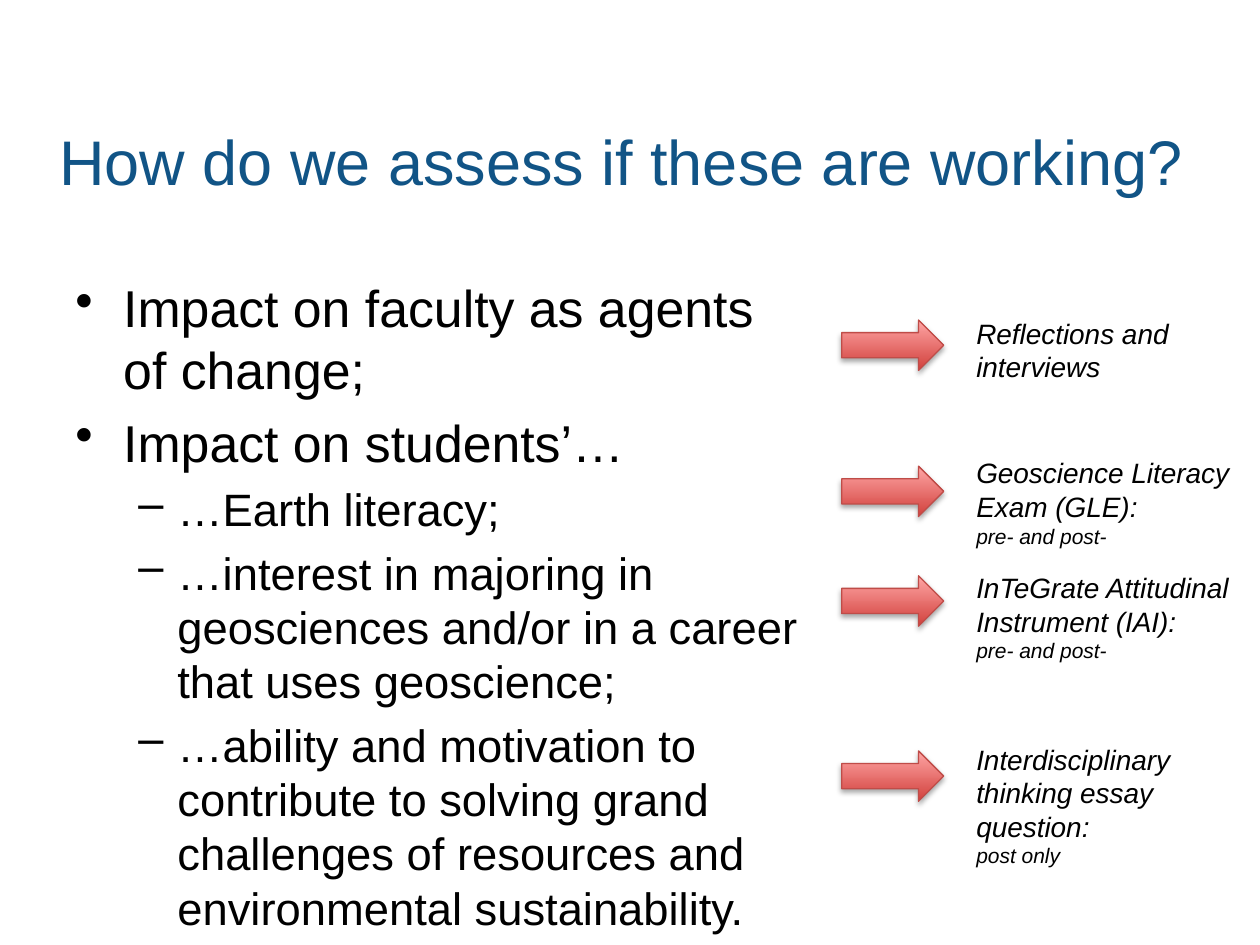
from lxml.etree import SubElement
from pptx import Presentation
from pptx.dml.color import RGBColor
from pptx.enum.shapes import MSO_SHAPE
from pptx.enum.text import MSO_ANCHOR, PP_ALIGN
from pptx.oxml import parse_xml
from pptx.oxml.ns import nsdecls, qn
from pptx.util import Inches, Pt

WIDE, HIGH = 10, 7.5
FACE = "Arial"
HUES = {"title": "115486", "text": "000000", "edge": "BF4C48",
        "deep": "D1403C", "pale": "FFA6A5", "shade": "000000"}

# level: size, mark, left indent, hanging indent, space before
LEVELS = [(29.6, "•", 0.38, 0.38, 6), (25.9, "–", 0.81, 0.31, 5)]
POINTS = [
    (0, "Impact on faculty as agents of change;"),
    (0, "Impact on students’…"),
    (1, "…Earth literacy;"),
    (1, "…interest in majoring in geosciences and/or in a career that uses geoscience;"),
    (1, "…ability and motivation to contribute to solving grand challenges "
        "of resources and environmental sustainability."),
]
# arrow top, note top, note width, note height (inches), method, timing
TOOLS = [
    (2.54, 2.46, 2.13, 0.64, "Reflections and interviews", None),
    (3.7, 3.57, 2.26, 0.84, "Geoscience Literacy Exam (GLE):", "pre- and post-"),
    (4.57, 4.48, 2.26, 0.84, "InTeGrate Attitudinal Instrument (IAI):", "pre- and post-"),
    (5.96, 5.84, 2.13, 1.11, "Interdisciplinary thinking essay question:", "post only"),
]


def hue(name):
    return RGBColor.from_string(HUES[name])


def share(left, top, width, height):
    """Turn inches into shares of the slide's size."""
    return left / WIDE, top / HIGH, width / WIDE, height / HIGH


class Deck:
    def __init__(self):
        self.prs = Presentation()
        self.prs.slide_width, self.prs.slide_height = Inches(WIDE), Inches(HIGH)
        self.slide = self.prs.slides.add_slide(self.prs.slide_layouts[6])

    def place(self, box):
        """Turn shares of the slide into lengths."""
        wide, high = self.prs.slide_width, self.prs.slide_height
        return [round(part * full) for part, full in zip(box, (wide, high) * 2)]

    def frame(self, box):
        frame = self.slide.shapes.add_textbox(*self.place(box)).text_frame
        frame.word_wrap = True
        return frame

    def line(self, frame, text, size, tint="text", italic=False):
        """Fill the first paragraph if it is empty, else add one."""
        para = frame.paragraphs[0]
        if para.runs:
            para = frame.add_paragraph()
        para.add_run().text = text
        font = para.font
        font.name, font.size, font.italic = FACE, Pt(size), italic
        font.color.rgb = hue(tint)
        return para

    def title(self, box, text):
        frame = self.frame(box)
        frame.vertical_anchor = MSO_ANCHOR.MIDDLE
        self.line(frame, text, 36, "title").alignment = PP_ALIGN.CENTER

    def bullets(self, box, points):
        frame = self.frame(box)
        for count, (level, text) in enumerate(points):
            size, mark, left, hang, gap = LEVELS[level]
            para = self.line(frame, text, size)
            para.level = level
            if count:
                para.space_before = Pt(gap)
            props = para._p.get_or_add_pPr()
            props.set("marL", str(Inches(left)))
            props.set("indent", str(-Inches(hang)))
            bullet = parse_xml(f'<a:buChar {nsdecls("a")} char="{mark}"/>')
            props.find(qn("a:defRPr")).addprevious(bullet)

    def arrow(self, box):
        shape = self.slide.shapes.add_shape(MSO_SHAPE.RIGHT_ARROW, *self.place(box))
        shape.fill.gradient()
        shape.fill.gradient_angle = 90
        for stop, name in zip(shape.fill.gradient_stops, ("deep", "pale")):
            stop.color.rgb = hue(name)
        shape.line.color.rgb = hue("edge")
        shape.line.width = Pt(0.75)
        self.shade(shape)

    def shade(self, shape):
        """Give the shape a soft shadow straight below it."""
        shape.shadow.inherit = False
        effects = shape._element.spPr.find(qn("a:effectLst"))
        outer = SubElement(effects, qn("a:outerShdw"), blurRad=str(Pt(3.1)),
                           dist=str(Pt(1.8)), dir="5400000", rotWithShape="0")
        tint = SubElement(outer, qn("a:srgbClr"), val=HUES["shade"])
        SubElement(tint, qn("a:alpha"), val="35000")

    def note(self, box, text, timing):
        frame = self.frame(box)
        self.line(frame, text, 16, italic=True)
        if timing:
            self.line(frame, timing, 12, italic=True)


def main():
    deck = Deck()
    deck.title(share(0, 0.81, 10, 0.92), "How do we assess if these are working? ")
    deck.bullets(share(0.5, 2.14, 6, 5.17), POINTS)
    for mid, top, width, height, text, timing in TOOLS:
        deck.arrow(share(6.68, mid, 0.81, 0.4))
        deck.note(share(7.65, top, width, height), text, timing)
    deck.prs.save("out.pptx")


if __name__ == "__main__":
    main()
